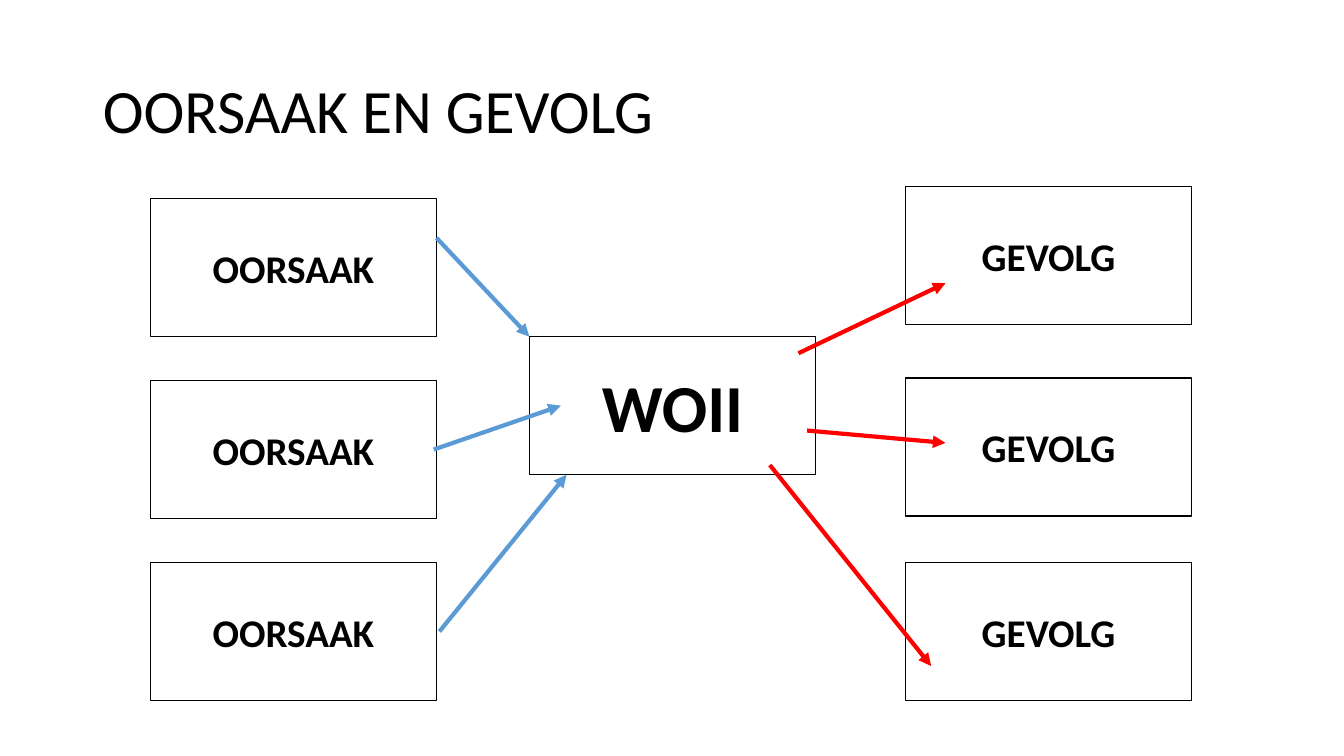
from collections import namedtuple

from lxml.etree import SubElement
from pptx import Presentation
from pptx.dml.color import RGBColor
from pptx.enum.shapes import MSO_CONNECTOR, MSO_SHAPE
from pptx.enum.text import MSO_ANCHOR, PP_ALIGN
from pptx.oxml.ns import qn
from pptx.util import Inches, Pt

COLORS = {"ink": "000000", "paper": "FFFFFF", "cause": "5B9BD5", "effect": "FF0000"}
FONT = "Calibri"
CARD_WIDTH, CARD_HEIGHT = 2.84, 1.37

CAUSE_LEFT, CAUSE_TOP, CAUSE_STEP = 1.49, 1.97, 1.805
EFFECT_LEFT, EFFECT_TOPS = 8.98, (1.85, 3.75, 5.58)

CAUSE_LINKS = [
    ((1, 0.285), (0, 0)),
    ((0.99, 0.5), (0.11, 0.5)),
    ((1.01, 0.5), (0.13, 1)),
]
EFFECT_LINKS = [
    ((0.94, 0.12), (0.14, 0.7)),
    ((0.97, 0.68), (0.14, 0.47)),
    ((0.84, 0.93), (0.09, 0.75)),
]

Box = namedtuple("Box", "left top width height")


def card_box(left, top):
    return Box(left, top, CARD_WIDTH, CARD_HEIGHT)


def point_in(box, share):
    across, down = share
    return Inches(box.left + across * box.width), Inches(box.top + down * box.height)


def color(name):
    return RGBColor.from_string(COLORS[name])


def write_text(shape, text, size, bold, paragraph_format):
    frame = shape.text_frame
    frame.word_wrap = True
    frame.vertical_anchor = MSO_ANCHOR.MIDDLE
    paragraph = frame.paragraphs[0]
    for name, value in paragraph_format.items():
        setattr(paragraph, name, value)
    run = paragraph.add_run()
    run.text = text
    for name, value in {"name": FONT, "size": Pt(size), "bold": bold}.items():
        setattr(run.font, name, value)
    run.font.color.rgb = color("ink")


def add_title(slide, box, text):
    title = slide.shapes.title
    for name, value in box._asdict().items():
        setattr(title, name, Inches(value))
    write_text(title, text, 44, False, {"alignment": PP_ALIGN.LEFT, "line_spacing": 0.9})


def add_card(slide, box, text, size=28):
    shape = slide.shapes.add_shape(MSO_SHAPE.RECTANGLE, *map(Inches, box))
    shape.shadow.inherit = False
    shape.fill.solid()
    shape.fill.fore_color.rgb = color("paper")
    shape.line.color.rgb = color("ink")
    shape.line.width = Pt(1)
    write_text(shape, text, size, True, {"alignment": PP_ALIGN.CENTER})


def add_arrow(slide, start_box, end_box, link, color_name):
    start, end = link
    arrow = slide.shapes.add_connector(
        MSO_CONNECTOR.STRAIGHT, *point_in(start_box, start), *point_in(end_box, end)
    )
    arrow.line.color.rgb = color(color_name)
    arrow.line.width = Pt(3)
    SubElement(arrow.line._get_or_add_ln(), qn("a:tailEnd"), type="triangle")
    SubElement(arrow._element.spPr, qn("a:effectLst"))


def add_column(slide, boxes, text):
    for box in boxes:
        add_card(slide, box, text)


def add_diagram(slide):
    event = card_box(5.25, 3.34)
    causes = [card_box(CAUSE_LEFT, CAUSE_TOP + row * CAUSE_STEP) for row in range(3)]
    effects = [card_box(EFFECT_LEFT, top) for top in EFFECT_TOPS]

    add_card(slide, event, "WOII", 48)
    add_column(slide, causes, "OORSAAK")
    add_column(slide, effects, "GEVOLG")
    for cause, link in zip(causes, CAUSE_LINKS):
        add_arrow(slide, cause, event, link, "cause")
    for effect, link in zip(effects, EFFECT_LINKS):
        add_arrow(slide, event, effect, link, "effect")


def main():
    presentation = Presentation()
    presentation.slide_width = Inches(13.33)
    presentation.slide_height = Inches(7.5)
    slide = presentation.slides.add_slide(presentation.slide_layouts[5])
    add_title(slide, Box(0.92, 0.4, 11.5, 1.45), "OORSAAK EN GEVOLG")
    add_diagram(slide)
    presentation.save("out.pptx")


if __name__ == "__main__":
    main()
